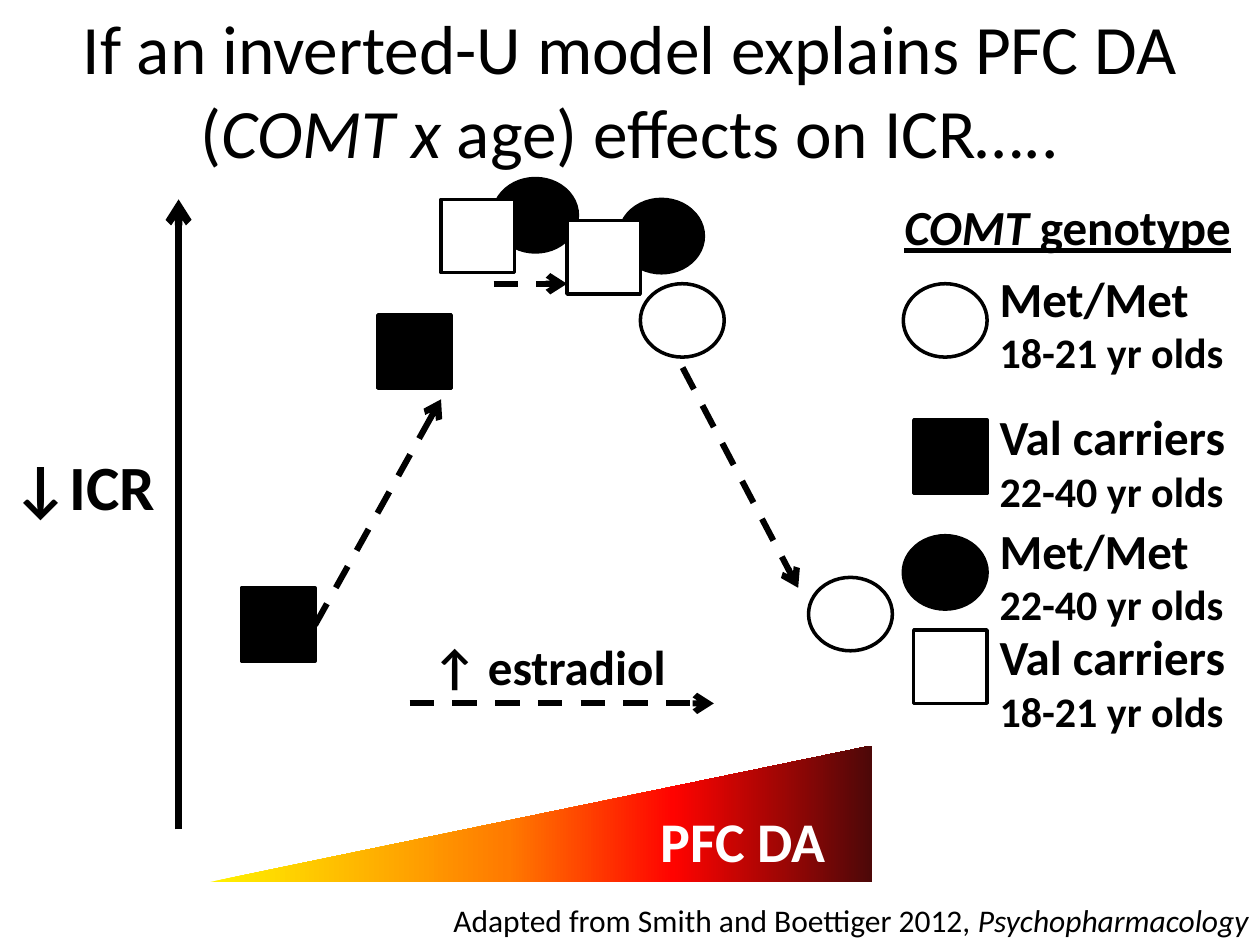
from copy import deepcopy

from lxml.etree import SubElement
from pptx import Presentation
from pptx.dml.color import RGBColor
from pptx.enum.dml import MSO_LINE
from pptx.enum.shapes import MSO_CONNECTOR, MSO_SHAPE
from pptx.enum.text import MSO_ANCHOR, MSO_AUTO_SIZE, PP_ALIGN
from pptx.oxml.ns import qn
from pptx.util import Cm, Pt

BLACK = RGBColor(0x00, 0x00, 0x00)
WHITE = RGBColor(0xFF, 0xFF, 0xFF)
YELLOW = RGBColor(0xFF, 0xF2, 0x00)
ORANGE = RGBColor(0xFF, 0x7A, 0x00)
RED = RGBColor(0xFF, 0x03, 0x00)
MAROON = RGBColor(0x4D, 0x08, 0x08)

SQUARE = MSO_SHAPE.RECTANGLE
OVAL = MSO_SHAPE.OVAL


class Board:
    """Draws the elements of one slide in a shared style."""

    font = "Calibri"
    high = 1.48
    wide = {SQUARE: 1.48, OVAL: 1.69}

    def __init__(self, slide):
        self.shapes = slide.shapes

    def text(self, box, lines, color=BLACK, wrap=False):
        frame = self.shapes.add_textbox(*map(Cm, box)).text_frame
        frame.word_wrap = wrap
        frame.auto_size = MSO_AUTO_SIZE.NONE if wrap else MSO_AUTO_SIZE.SHAPE_TO_FIT_TEXT
        for i, line in enumerate(lines):
            para = frame.add_paragraph() if i else frame.paragraphs[0]
            for words, size, marks in line:
                run = para.add_run()
                run.text = words
                font = run.font
                font.name, font.size = self.font, Pt(size)
                font.color.rgb = color
                font.bold = "b" in marks
                font.italic = "i" in marks
                font.underline = "u" in marks
        return frame

    def title(self, box, line):
        frame = self.text(box, [line], wrap=True)
        frame.vertical_anchor = MSO_ANCHOR.MIDDLE
        frame.paragraphs[0].alignment = PP_ALIGN.CENTER

    def mark(self, kind, left, top, fill):
        shape = self.shapes.add_shape(
            kind, Cm(left), Cm(top), Cm(self.wide[kind]), Cm(self.high))
        shape.shadow.inherit = False
        shape.fill.solid()
        shape.fill.fore_color.rgb = fill
        shape.line.color.rgb = BLACK
        shape.line.width = Pt(2)

    def arrow(self, start, end, width=3.5, dash=True):
        line = self.shapes.add_connector(
            MSO_CONNECTOR.STRAIGHT, *map(Cm, (*start, *end)))
        line.line.color.rgb = BLACK
        line.line.width = Pt(width)
        if dash:
            line.line.dash_style = MSO_LINE.DASH
        SubElement(line.line._get_or_add_ln(), qn("a:tailEnd"), type="arrow")
        SubElement(line._element.spPr, qn("a:effectLst"))

    def wedge(self, box, stops):
        shape = self.shapes.add_shape(MSO_SHAPE.RIGHT_TRIANGLE, *map(Cm, box))
        shape.rotation = 270
        shape.shadow.inherit = False
        shape.line.fill.background()
        fill = shape.fill
        fill.gradient()
        fill.gradient_angle = 270
        nodes = shape._element.spPr.find(qn("a:gradFill")).find(qn("a:gsLst"))
        while len(nodes) < len(stops):
            nodes.append(deepcopy(nodes[0]))
        for stop, (place, color) in zip(fill.gradient_stops, stops):
            stop.position = place
            stop.color.rgb = color


def main():
    deck = Presentation()
    deck.slide_width, deck.slide_height = Cm(25.4), Cm(19.05)
    board = Board(deck.slides.add_slide(deck.slide_layouts[6]))

    board.title((1.27, 0.2, 22.86, 3.18), [
        ("If an inverted-U model explains PFC DA (", 39.6, ""),
        ("COMT x ", 39.6, "i"),
        ("age) effects on ICR…..", 39.6, "")])

    board.wedge((9.53, 9.74, 2.75, 13.33),
                [(0, YELLOW), (0.45, ORANGE), (0.7, RED), (1, MAROON)])
    board.text((13.06, 16.13, 3.89, 1.63), [[("PFC DA", 32, "b")]], WHITE)
    board.arrow((3.6, 16.72), (3.6, 4.02), 4.25, False)
    board.text((0, 8.89, 3.4, 1.8), [[("↓ICR", 36, "b")]])

    marks = [
        (SQUARE, 4.87, 11.85, BLACK), (SQUARE, 7.62, 6.35, BLACK),
        (OVAL, 9.95, 3.6, BLACK), (SQUARE, 8.89, 4.02, WHITE),
        (OVAL, 12.49, 4.02, BLACK), (SQUARE, 11.43, 4.45, WHITE),
        (OVAL, 12.91, 5.72, WHITE), (OVAL, 16.3, 11.64, WHITE)]
    for mark in marks:
        board.mark(*mark)

    arrows = [
        ((6.35, 12.6), (8.89, 8.05)), ((9.95, 5.72), (11.43, 5.72)),
        ((13.76, 7.41), (16.09, 11.85)), ((8.26, 14.18), (14.39, 14.18))]
    for start, end in arrows:
        board.arrow(start, end)
    board.text((8.47, 12.7, 5.26, 1.45), [[("↑ estradiol", 28, "b")]])

    board.text((17.98, 3.84, 7.16, 1.45),
               [[("COMT ", 28, "biu"), ("genotype", 28, "bu")]])
    legend = [
        (OVAL, WHITE, 5.72, 5.28, "Met/Met", "18-21"),
        (SQUARE, BLACK, 8.47, 8.08, "Val carriers", "22-40"),
        (OVAL, BLACK, 10.8, 10.36, "Met/Met", "22-40"),
        (SQUARE, WHITE, 12.7, 12.5, "Val carriers", "18-21")]
    for kind, fill, top, head, gene, age in legend:
        board.mark(kind, 19.9 - board.wide[kind], top, fill)
        board.text((19.9, head, 5.1, 2.49),
                   [[(gene, 28, "b")], [(f"{age} yr olds", 24, "b")]])

    board.text((8.89, 18.03, 16.59, 1.02), [[
        ("Adapted from Smith and Boettiger 2012, ", 18, ""),
        ("Psychopharmacology", 18, "i")]])

    deck.save("out.pptx")


if __name__ == "__main__":
    main()
